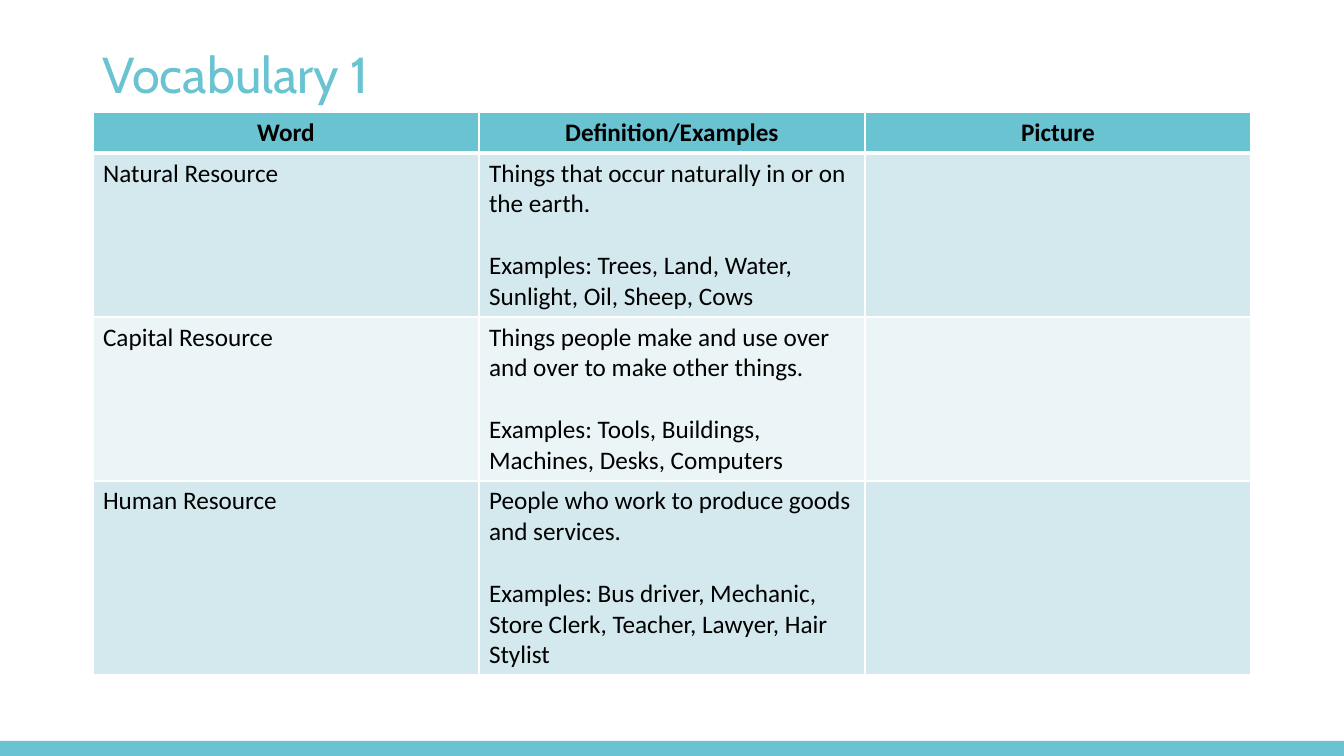
from dataclasses import dataclass

from lxml.etree import SubElement
from pptx import Presentation
from pptx.dml.color import RGBColor
from pptx.enum.shapes import MSO_SHAPE
from pptx.enum.text import MSO_ANCHOR, PP_ALIGN
from pptx.oxml.ns import qn
from pptx.slide import Slide
from pptx.table import _Cell
from pptx.util import Emu, Pt

EMU_PER_PX = 914400 / 100.8
SLIDE_WIDTH, SLIDE_HEIGHT = 1344, 756
BAR_HEIGHT = 15
LEFT, TABLE_TOP = 93, 112
COLUMN_WIDTH = 386
HEADER_HEIGHT = 41
HEADINGS = ("Word", "Definition/Examples", "Picture")
COLORS = {
    "teal": "69C3D1",
    "dark band": "D4E9EE",
    "light band": "EBF5F7",
    "text": "000000",
    "border": "FFFFFF",
}


@dataclass(frozen=True)
class Entry:
    word: str
    definition: str
    examples: str
    height: int


ENTRIES = (
    Entry("Natural Resource", "Things that occur naturally in or on the earth.",
          "Examples: Trees, Land, Water, Sunlight, Oil, Sheep, Cows", 164),
    Entry("Capital Resource", "Things people make and use over and over to make other things.",
          "Examples: Tools, Buildings, Machines, Desks, Computers", 164),
    Entry("Human Resource", "People who work to produce goods and services.",
          "Examples: Bus driver, Mechanic, Store Clerk, Teacher, Lawyer, Hair Stylist", 194),
)


def px(length: int) -> Emu:
    return Emu(round(length * EMU_PER_PX))


def color(name: str) -> RGBColor:
    return RGBColor.from_string(COLORS[name])


def add_bottom_bar(slide: Slide) -> None:
    bar = slide.shapes.add_shape(MSO_SHAPE.RECTANGLE, 0, px(SLIDE_HEIGHT - BAR_HEIGHT),
                                 px(SLIDE_WIDTH), px(BAR_HEIGHT))
    bar.shadow.inherit = False
    bar.fill.solid()
    bar.fill.fore_color.rgb = color("teal")
    bar.line.fill.background()


def add_title(slide: Slide, text: str) -> None:
    title = slide.shapes.add_textbox(px(LEFT), px(44), px(3 * COLUMN_WIDTH), px(67))
    frame = title.text_frame
    frame.word_wrap = True
    frame.vertical_anchor = MSO_ANCHOR.MIDDLE
    paragraph = frame.paragraphs[0]
    paragraph.text = text
    paragraph.line_spacing = 0.9
    paragraph.font.name = "Cabin"
    paragraph.font.size = Pt(36)
    paragraph.font.color.rgb = color("teal")


def add_borders(cell: _Cell, top: int, bottom: int) -> None:
    """Line all four sides; top and bottom are widths in points."""
    properties = cell._tc.get_or_add_tcPr()
    for side, width in (("L", 1), ("R", 1), ("T", top), ("B", bottom)):
        line = SubElement(properties, qn(f"a:ln{side}"), w=str(Pt(width)))
        fill = SubElement(line, qn("a:solidFill"))
        SubElement(fill, qn("a:srgbClr"), val=COLORS["border"])


def fill_cell(cell: _Cell, lines: tuple[str, ...], band: str, header: bool) -> None:
    cell.fill.solid()
    cell.fill.fore_color.rgb = color(band)
    cell.text = "\n".join(lines)
    for index, paragraph in enumerate(cell.text_frame.paragraphs):
        if index:
            paragraph.space_before = Pt(22)
        paragraph.alignment = PP_ALIGN.CENTER if header else PP_ALIGN.LEFT
        paragraph.font.name = "Calibri"
        paragraph.font.size = Pt(18)
        paragraph.font.bold = header
        paragraph.font.color.rgb = color("text")


def add_vocabulary(slide: Slide) -> None:
    heights = [HEADER_HEIGHT, *(entry.height for entry in ENTRIES)]
    vocabulary = slide.shapes.add_table(
        len(heights), len(HEADINGS), px(LEFT), px(TABLE_TOP),
        px(COLUMN_WIDTH * len(HEADINGS)), px(sum(heights))).table
    for column in vocabulary.columns:
        column.width = px(COLUMN_WIDTH)
    contents = [[(heading,) for heading in HEADINGS]]
    contents += [[(entry.word,), (entry.definition, entry.examples), ()] for entry in ENTRIES]
    for number, (row, height, texts) in enumerate(zip(vocabulary.rows, heights, contents)):
        row.height = px(height)
        header = number == 0
        band = "teal" if header else "dark band" if number % 2 else "light band"
        for cell, lines in zip(row.cells, texts):
            add_borders(cell, top=3 if number == 1 else 1, bottom=3 if header else 1)
            fill_cell(cell, lines, band, header)


def main() -> None:
    presentation = Presentation()
    presentation.slide_width = px(SLIDE_WIDTH)
    presentation.slide_height = px(SLIDE_HEIGHT)
    slide = presentation.slides.add_slide(presentation.slide_layouts[6])
    add_bottom_bar(slide)
    add_title(slide, "Vocabulary 1")
    add_vocabulary(slide)
    presentation.save("out.pptx")


if __name__ == "__main__":
    main()
